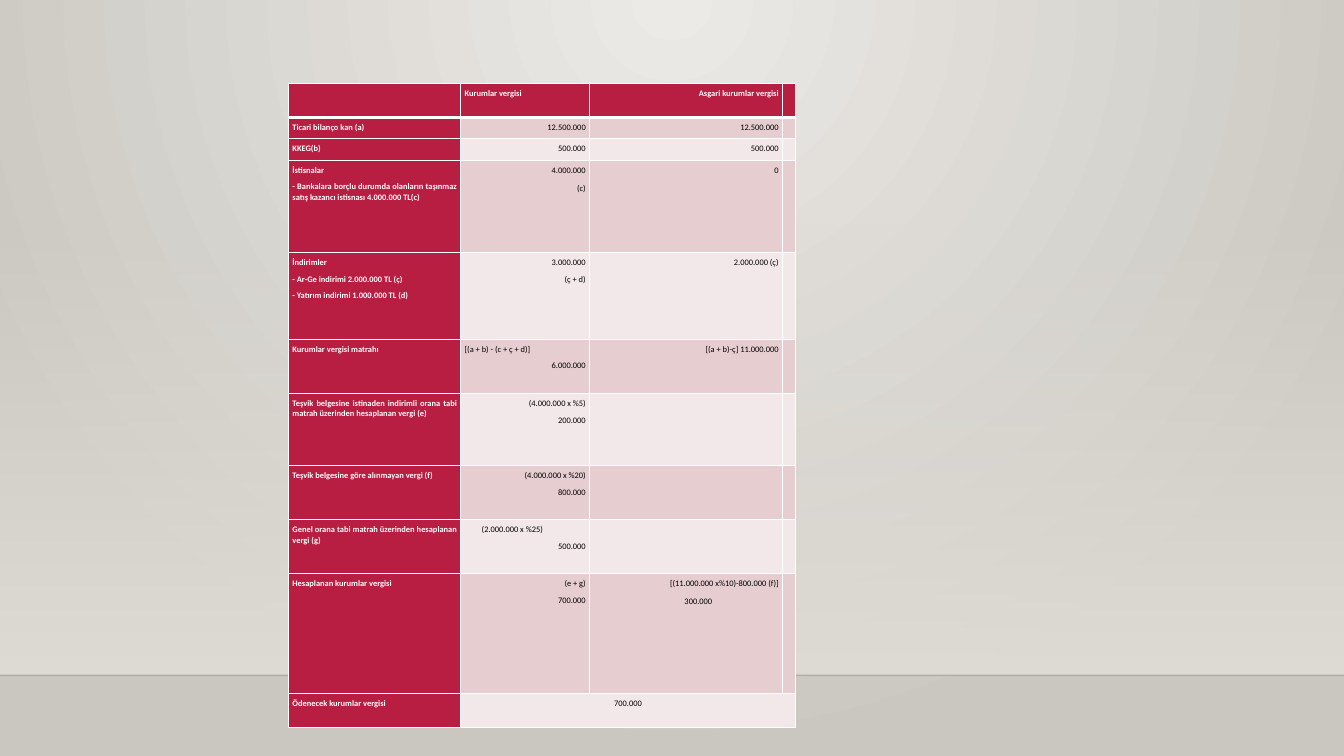
from dataclasses import dataclass

import pptx
import pptx.dml.color
import pptx.enum.shapes
import pptx.enum.text
import pptx.oxml
import pptx.oxml.ns
import pptx.util
from lxml import etree

Cm = pptx.util.Cm
Pt = pptx.util.Pt
Align = pptx.enum.text.PP_ALIGN
qn = pptx.oxml.ns.qn
L, C, R, J = Align.LEFT, Align.CENTER, Align.RIGHT, Align.JUSTIFY


class Theme:
    font = "Calibri"
    size = 6
    red = "B71E42"
    dark = "E6CDCF"
    light = "F3E8E9"
    white = "FFFFFF"
    black = "000000"
    glow = "ECEAE7"
    edge = "CAC7C1"
    haze = "DFDBD5"


@dataclass
class Entry:
    lines: list
    aligns: list
    gap: float = 4
    first: float = 0
    left: float = 0


def entry(item, col):
    if isinstance(item, Entry):
        return item
    lines = item.split("\n")
    return Entry(lines, [R if col else J] * len(lines))


def rgb(code):
    return pptx.dml.color.RGBColor.from_string(code)


def fade(color, share):
    etree.SubElement(color, qn("a:alpha"), val=str(share * 1000))


class Page:
    def __init__(self, deck, theme):
        self.theme = theme
        self.slide = deck.slides.add_slide(deck.slide_layouts[6])

    def blend(self, fill, start, end):
        fill.gradient()
        for stop, code, place in zip(fill.gradient_stops, (start, end), (0, 1)):
            stop.color.rgb = rgb(code)
            stop.position = place

    def backdrop(self):
        self.blend(self.slide.background.fill, self.theme.glow, self.theme.edge)
        lin = next(self.slide._element.iter(qn("a:lin")))
        ring = etree.Element(qn("a:path"), path="circle")
        etree.SubElement(ring, qn("a:fillToRect"), l="43000", t="0", r="43000", b="100000")
        lin.getparent().replace(lin, ring)

    def wall(self, left, top, width, height):
        kind = pptx.enum.shapes.MSO_SHAPE.RECTANGLE
        shape = self.slide.shapes.add_shape(kind, Cm(left), Cm(top), Cm(width), Cm(height))
        shape.shadow.inherit = False
        shape.line.fill.background()
        self.blend(shape.fill, self.theme.haze, self.theme.haze)
        shape.fill.gradient_angle = 270
        stop = next(shape._element.iter(qn("a:gs")))
        fade(stop[0], 0)

    def floor(self, width, top):
        kind = pptx.enum.shapes.MSO_CONNECTOR.STRAIGHT
        line = self.slide.shapes.add_connector(kind, 0, Cm(top), Cm(width), Cm(top))
        line.line.width = Pt(1)
        line.line.color.rgb = rgb(self.theme.black)
        fade(next(line._element.spPr.iter(qn("a:srgbClr"))), 20)
        etree.SubElement(line._element.spPr, qn("a:effectLst"))

    def border(self, cell, row):
        props = cell._tc.get_or_add_tcPr()
        wide = {"T": 3 if row == 1 else 1, "B": 3 if row == 0 else 1}
        for side in "LRTB":
            line = etree.SubElement(props, qn("a:ln" + side), w=str(Pt(wide.get(side, 1))))
            solid = etree.SubElement(line, qn("a:solidFill"))
            etree.SubElement(solid, qn("a:srgbClr"), val=self.theme.white)

    def label(self, cell, item, head):
        cell.margin_left = cell.margin_right = cell.margin_top = cell.margin_bottom = Cm(0.1)
        frame = cell.text_frame
        frame.text = "\n".join(item.lines)
        last = len(item.lines) - 1
        for i, (para, align) in enumerate(zip(frame.paragraphs, item.aligns)):
            para.alignment = align
            para.line_spacing = 1.07
            para.space_after = Pt(7.5 if i == last else item.gap)
            props = para._p.get_or_add_pPr()
            if i == 0 and item.first:
                props.set("indent", str(Cm(item.first)))
            if i == last and item.left:
                props.set("marL", str(Cm(item.left)))
            para.font.name = self.theme.font
            para.font.size = Pt(self.theme.size)
            para.font.bold = head
            para.font.color.rgb = rgb(self.theme.white if head else self.theme.black)
            if not para.runs:
                etree.SubElement(para._p, qn("a:endParaRPr"), sz=str(self.theme.size * 100))

    def table(self, left, top, cols, rows):
        high = [row[0] for row in rows]
        box = self.slide.shapes.add_table(
            len(rows), len(cols), Cm(left), Cm(top), Cm(sum(cols)), Cm(sum(high)))
        table = box.table
        table.first_row = table.horz_banding = False
        for col, width in zip(table.columns, cols):
            col.width = Cm(width)
        for r, (height, *items) in enumerate(rows):
            table.rows[r].height = Cm(height)
            items += [""] * (len(cols) - len(items))
            for c, item in enumerate(items):
                cell = table.cell(r, c)
                head = r == 0 or c == 0
                self.border(cell, r)
                cell.fill.solid()
                band = self.theme.dark if r % 2 else self.theme.light
                cell.fill.fore_color.rgb = rgb(self.theme.red if head else band)
                self.label(cell, entry(item, c), head)
        end = len(rows) - 1
        table.cell(end, 1).merge(table.cell(end, len(cols) - 1))


ROWS = [
    (0.86, "", Entry(["Kurumlar vergisi"], [L]), "Asgari kurumlar vergisi"),
    (0.54, "Ticari bilanço kan (a)", "12.500.000", "12.500.000"),
    (0.54, "KKEG(b)", "500.000", "500.000"),
    (2.33, "İstisnalar\n- Bankalara borçlu durumda olanların taşınmaz satış kazancı "
           "istisnası 4.000.000 TL(c)",
     Entry(["4.000.000", "(c)"], [R, R], gap=5), "0"),
    (2.18, "İndirimler\n- Ar-Ge indirimi 2.000.000 TL (ç)\n- Yatırım indirimi 1.000.000 TL (d)",
     "3.000.000\n(ç + d)", "2.000.000 (ç)"),
    (1.36, Entry(["Kurumlar vergisi matrahı"], [L]),
     Entry(["[(a + b) - (c + ç + d)]", "6.000.000"], [L, R]), "[(a + b)-ç] 11.000.000"),
    (1.83, "Teşvik belgesine istinaden indirimli orana tabi matrah üzerinden hesaplanan vergi (e)",
     Entry(["(4.000.000 x %5)", "200.000"], [R, R], gap=5)),
    (1.36, "Teşvik belgesine göre alınmayan vergi (f)", "(4.000.000 x %20)\n800.000"),
    (1.36, "Genel orana tabi matrah üzerinden hesaplanan vergi (g)",
     Entry(["(2.000.000 x %25)", "500.000"], [J, R], first=0.43)),
    (3.02, Entry(["Hesaplanan kurumlar vergisi"], [L]), "(e + g)\n700.000",
     Entry(["[(11.000.000 x%10)-800.000 (f)]", "300.000"], [R, L], gap=5, left=2.29)),
    (0.86, Entry(["Ödenecek kurumlar vergisi"], [L]), Entry(["700.000"], [C])),
]


def main():
    deck = pptx.Presentation()
    deck.slide_width, deck.slide_height = Cm(33.87), Cm(19.05)
    page = Page(deck, Theme())
    page.backdrop()
    page.wall(0, 5.61, 33.87, 11.41)
    page.floor(33.87, 17.02)
    page.table(7.27, 2.1, [4.34, 3.25, 4.86, 0.32], ROWS)
    deck.save("out.pptx")


if __name__ == "__main__":
    main()
